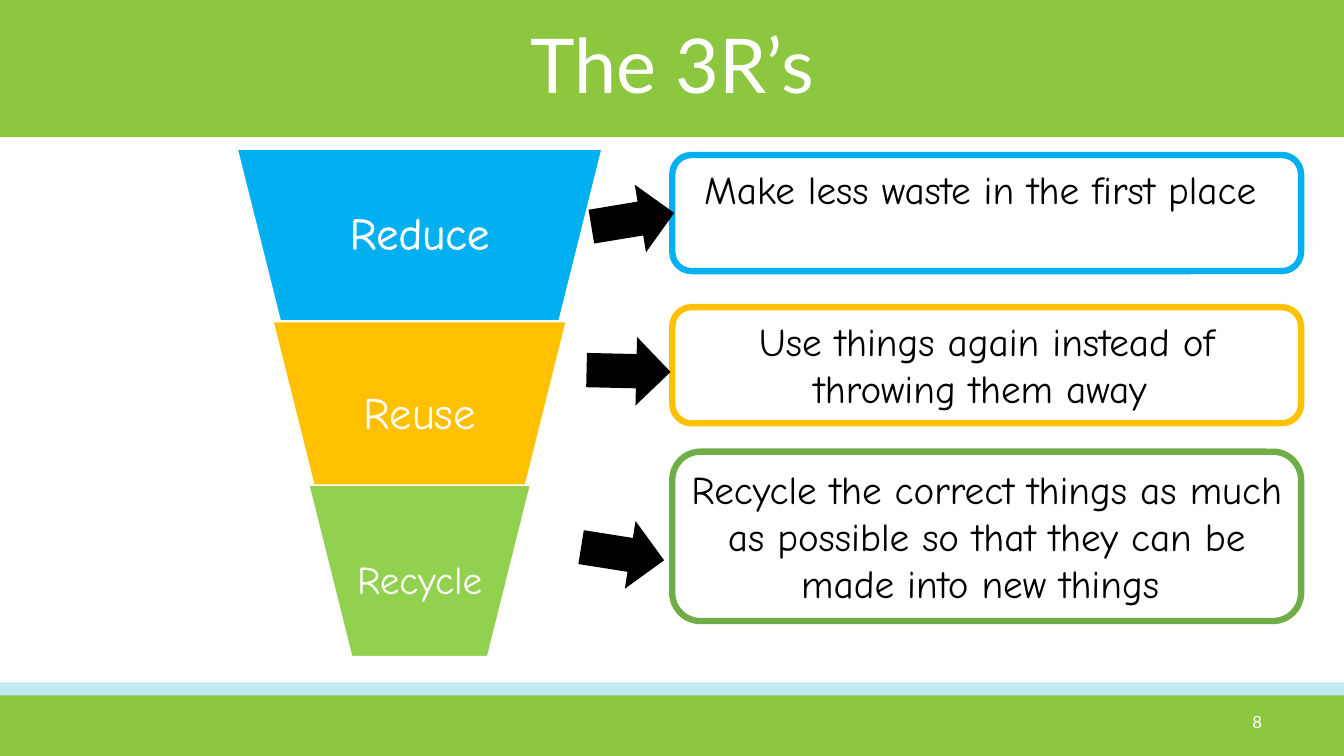
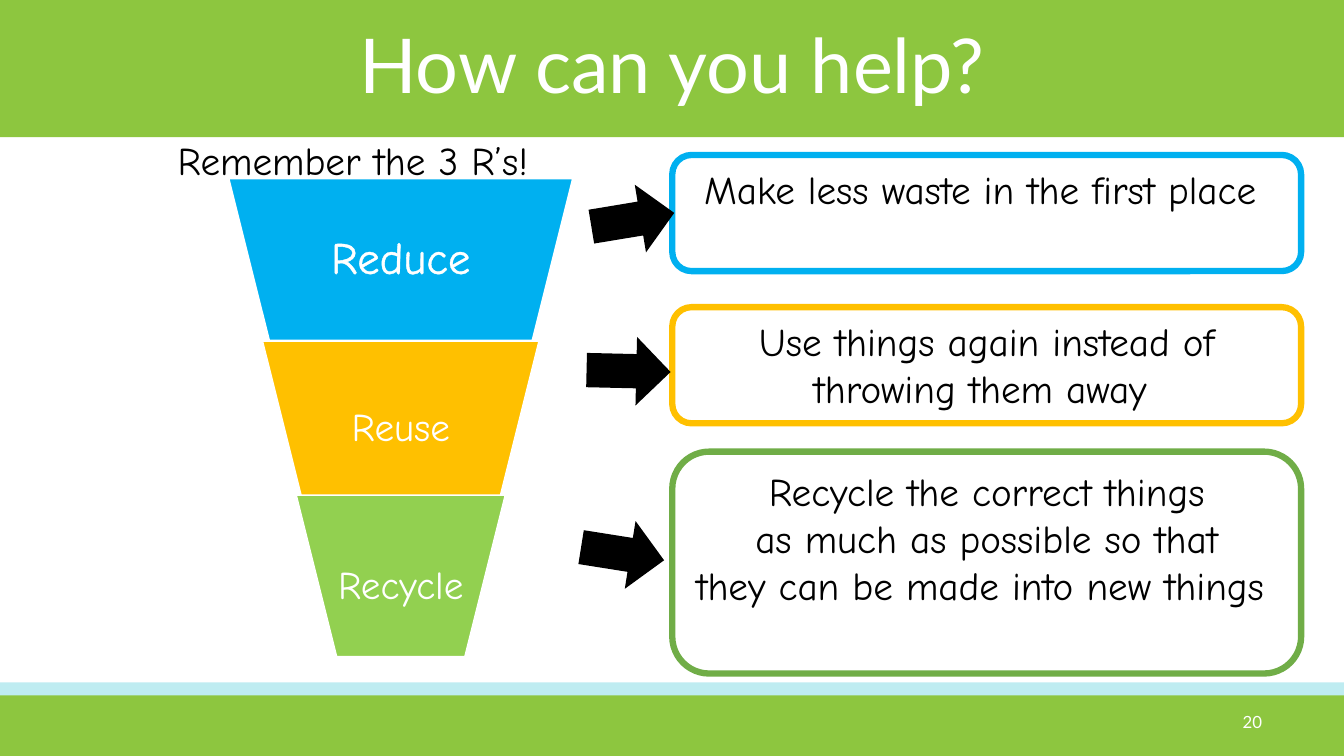
from lxml import etree
from pptx import Presentation
from pptx.dml.color import RGBColor
from pptx.enum.shapes import MSO_SHAPE
from pptx.enum.text import MSO_ANCHOR, MSO_AUTO_SIZE, PP_ALIGN
from pptx.oxml.ns import qn
from pptx.util import Pt

RECTANGLE = MSO_SHAPE.RECTANGLE
TRAPEZOID = MSO_SHAPE.TRAPEZOID
ROUNDED = MSO_SHAPE.ROUNDED_RECTANGLE
ARROW = MSO_SHAPE.RIGHT_ARROW
TOP, MIDDLE = MSO_ANCHOR.TOP, MSO_ANCHOR.MIDDLE
CENTER, RIGHT = PP_ALIGN.CENTER, PP_ALIGN.RIGHT
NO_FIT = MSO_AUTO_SIZE.NONE

WIDTH, HEIGHT = 960, 540
HEADER_HEIGHT = 98
FOOTER_TOP = 496.8
WHITE, BLACK = "FFFFFF", "000000"
GREEN, TEAL = "8DC63F", "20BFD0"
BLUE, AMBER, LIME, LEAF = "00B0F0", "FFC000", "92D050", "70AD47"
HEADING_FONT, TEXT_FONT = "Lato", "Comic Neue"
HARD_SPACE = chr(160)

TITLE_STYLE = {"name": HEADING_FONT, "size": Pt(54)}
NUMBER_STYLE = {"name": HEADING_FONT, "size": Pt(12)}
CARD_STYLE = {"name": TEXT_FONT, "size": Pt(28)}
TIGHT = {"alignment": CENTER, "line_spacing": 0.9}
SMALL_INSETS = {f"margin_{side}": Pt(3) for side in ("left", "top", "right", "bottom")}

FUNNEL_BOTTOM = 469
TIERS = [
    ("Reduce", BLUE, 0, 0.338, 0),
    ("Reuse", AMBER, 0.34, 0.324, 0.044),
    ("Recycle", LIME, 0.662, 0.338, 0.044),
]
CARD_BOX = (480.2, 110.7, 449.2)
ARROW_SIZE = (60, 49)
CARDS = [
    (BLUE, 0, (-58.2, 21.8), 350.6),
    (AMBER, 108.7, (-61.2, 21.1), 1.3),
    (LEAF, 211.9, (-65.5, 48.4), 9),
]
REDUCE_TEXT = "Make less waste in the first place "
REUSE_TEXT = f"Use things again instead of throwing them away{HARD_SPACE}"


def colour(hex_string):
    return RGBColor.from_string(hex_string)


def apply(target, values):
    for name, value in values.items():
        setattr(target, name, value)


def place(shape, left, top, width, height):
    apply(shape, {"left": Pt(left), "top": Pt(top), "width": Pt(width), "height": Pt(height)})


def add_shape(shapes, kind, box, fill=None, line=None, line_width=1):
    shape = shapes.add_shape(kind, *map(Pt, box))
    shape.shadow.inherit = False
    if fill:
        shape.fill.solid()
        shape.fill.fore_color.rgb = colour(fill)
    else:
        shape.fill.background()
    if line:
        shape.line.color.rgb = colour(line)
        shape.line.width = Pt(line_width)
    else:
        shape.line.fill.background()
    return shape


def write(shape, text, font, text_colour, paragraph_format, frame_format):
    frame = shape.text_frame
    apply(frame, {"word_wrap": True, "auto_size": NO_FIT, **frame_format})
    paragraph = frame.paragraphs[0]
    apply(paragraph, paragraph_format)
    run = paragraph.add_run()
    run.text = text
    apply(run.font, font)
    run.font.color.rgb = colour(text_colour)
    return run


def outline_text(run, hex_string, width):
    properties = run.font._element
    line = etree.Element(qn("a:ln"), w=str(Pt(width)))
    fill = etree.SubElement(line, qn("a:solidFill"))
    etree.SubElement(fill, qn("a:srgbClr"), val=hex_string)
    properties.insert(0, line)


def add_master_bands(presentation, slide):
    bands = [
        (TEAL, (0, 487.4, WIDTH, 17)),
        (GREEN, (0, 0, WIDTH, HEADER_HEIGHT)),
        (GREEN, (0, FOOTER_TOP, WIDTH, HEIGHT - FOOTER_TOP)),
    ]
    tree = presentation.slide_master.shapes._spTree
    for index, (fill, box) in enumerate(bands):
        band = add_shape(slide.shapes, RECTANGLE, box, fill)
        if fill == TEAL:
            value = band._element.spPr.find(".//" + qn("a:srgbClr"))
            etree.SubElement(value, qn("a:alpha"), val="29000")
        band._element.nvSpPr.cNvPr.set("id", str(101 + index))
        tree.insert(2 + index, band._element)


def add_title(slide, text):
    title = slide.shapes.title
    place(title, 0, 0, WIDTH, HEADER_HEIGHT)
    write(title, text, TITLE_STYLE, WHITE, TIGHT, {"vertical_anchor": MIDDLE})


def add_number(slide, number):
    box = slide.shapes.add_textbox(Pt(692.7), Pt(501), Pt(216), Pt(29))
    write(box, str(number), NUMBER_STYLE, WHITE, {"alignment": RIGHT}, {"vertical_anchor": MIDDLE})


def add_reminder(slide, text):
    body = slide.placeholders[1]
    place(body, 0, HEADER_HEIGHT - 0.4, 504, 46)
    write(body, text, CARD_STYLE, BLACK, {**TIGHT, "space_before": Pt(10)}, {"vertical_anchor": TOP})
    properties = body.text_frame.paragraphs[0]._p.get_or_add_pPr()
    for name in ("marL", "indent"):
        properties.set(name, "0")
    etree.SubElement(properties, qn("a:buNone"))


def add_funnel(slide, left, top, width, sizes):
    height = FUNNEL_BOTTOM - top
    group = slide.shapes.add_group_shape()
    for level, ((text, fill, start, share, drop), size) in enumerate(zip(TIERS, sizes)):
        inset = width * 0.098 * level
        tier_left, tier_width = left + inset, width - 2 * inset
        tier_top, tier_height = top + start * height, share * height
        tier = add_shape(group.shapes, TRAPEZOID, (tier_left, tier_top, tier_width, tier_height), fill, WHITE)
        tier.rotation = 180
        label_box = (tier_left, tier_top + drop * height, tier_width, tier_height - drop * height)
        label = group.shapes.add_textbox(*map(Pt, label_box))
        run = write(label, text, {"name": TEXT_FONT, "size": Pt(size)}, WHITE, TIGHT,
                    {"vertical_anchor": MIDDLE, **SMALL_INSETS})
        if level == 0:
            outline_text(run, WHITE, 0.75)


def add_cards(slide, left, top, width, texts, heights):
    for (line, offset, (arrow_x, arrow_y), angle), text, height in zip(CARDS, texts, heights):
        card_top = top + offset
        card = add_shape(slide.shapes, ROUNDED, (left, card_top, width, height), None, line, 4.5)
        write(card, text, CARD_STYLE, BLACK, {"alignment": CENTER}, {"vertical_anchor": TOP})
        arrow = add_shape(slide.shapes, ARROW, (left + arrow_x, card_top + arrow_y, *ARROW_SIZE), BLACK)
        arrow.rotation = angle


def add_three_rs_slide(presentation, layout, title, number, funnel, sizes, recycle_text, recycle_height):
    slide = presentation.slides.add_slide(presentation.slide_layouts[layout])
    add_title(slide, title)
    add_number(slide, number)
    add_funnel(slide, *funnel, sizes)
    add_cards(slide, *CARD_BOX, (REDUCE_TEXT, REUSE_TEXT, recycle_text), (83, 83, recycle_height))
    return slide


def main():
    presentation = Presentation()
    apply(presentation, {"slide_width": Pt(WIDTH), "slide_height": Pt(HEIGHT)})
    overview = add_three_rs_slide(
        presentation, 5, "The 3R’s", 8, (169.5, 106.6, 260.5), (32, 32, 28),
        f"Recycle the correct things as much as{HARD_SPACE}possible so that they can be "
        f"made into new things{HARD_SPACE}", 121)
    add_master_bands(presentation, overview)
    recap = add_three_rs_slide(
        presentation, 1, "How can you help?", 20, (163.5, 127.7, 245.5), (32, 28, 28),
        f"Recycle the correct things as{HARD_SPACE}much as{HARD_SPACE}possible so that "
        f"they{HARD_SPACE}can be made into new things{HARD_SPACE}", 158.5)
    add_reminder(recap, "Remember the 3 R’s!")
    presentation.save("out.pptx")


if __name__ == "__main__":
    main()
